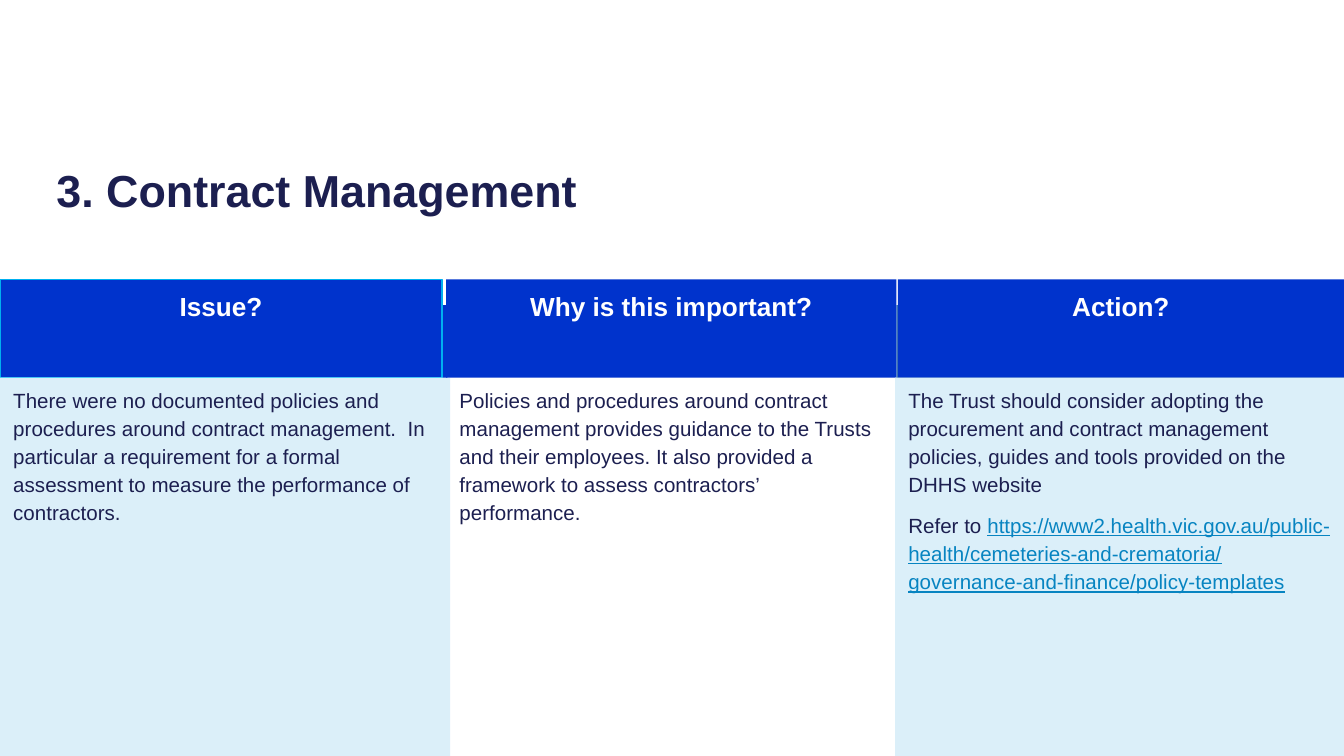
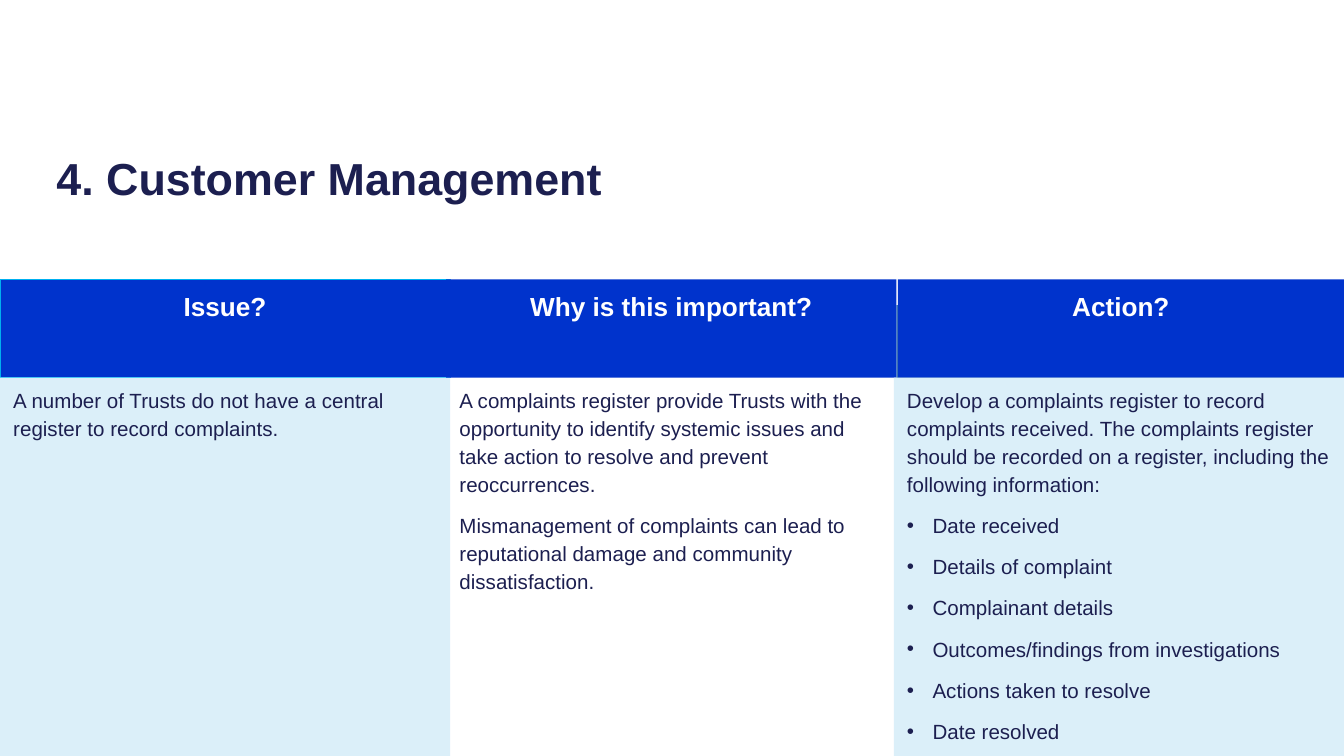
from dataclasses import dataclass

from lxml.etree import SubElement
from pptx import Presentation
from pptx.dml.color import RGBColor
from pptx.enum.shapes import MSO_SHAPE
from pptx.enum.text import MSO_ANCHOR, MSO_AUTO_SIZE, PP_ALIGN
from pptx.oxml.ns import qn
from pptx.shapes.autoshape import Shape
from pptx.slide import Slide
from pptx.text.text import _Paragraph
from pptx.util import Inches, Pt

# Shared style
COLORS = {
    "navy": "1C1F50",
    "blue": "0033CC",
    "steel": "427CB2",
    "pale": "DBEFF9",
    "cyan": "00B0F0",
    "link": "0784C1",
    "white": "FFFFFF",
}
FONT = "Arial"
PAGE_WIDTH = 10
PAGE_HEIGHT = PAGE_WIDTH * 9 / 16
HEADER_TOP, HEADER_HEIGHT = 2.08, 0.73
BODY_TOP = HEADER_TOP + HEADER_HEIGHT
BODY_HEIGHT = PAGE_HEIGHT - BODY_TOP
BODY_WIDTH = 3.35
PANEL_TOP, PANEL_WIDTH = 2.27, 3.33
BULLET_INDENT = 0.19


@dataclass(frozen=True)
class Line:
    text: str
    link: str = ""
    bullet: bool = False


@dataclass(frozen=True)
class Column:
    heading: str
    header_left: float
    header_width: float
    body_left: float
    lines: list[Line]
    body_fill: str | None = "pale"
    outline: str | None = None


@dataclass(frozen=True)
class Topic:
    title: str
    title_top: float
    title_height: float
    columns: list[Column]


def issue(header_width: float, lines: list[Line]) -> Column:
    return Column("Issue?", 0, header_width, 0, lines, outline="cyan")


def importance(lines: list[Line]) -> Column:
    return Column("Why is this important?", 3.32, BODY_WIDTH, 3.32, lines, body_fill=None)


def action(body_left: float, lines: list[Line]) -> Column:
    return Column("Action?", 6.68, 3.32, body_left, lines)


# Content
TOPICS = [
    Topic("3. Contract Management", 0.97, 0.8, [
        issue(3.29, [Line(
            "There were no documented policies and procedures around contract "
            "management.  In particular a requirement for a formal assessment to "
            "measure the performance of contractors.")]),
        importance([Line(
            "Policies and procedures around contract management provides guidance "
            "to the Trusts and their employees. It also provided a framework to "
            "assess contractors’ performance.")]),
        action(6.66, [
            Line("The Trust should consider adopting the procurement and contract "
                 "management policies, guides and tools provided on the DHHS website"),
            Line("Refer to ",
                 link="https://www2.health.vic.gov.au/public-health/"
                      "cemeteries-and-crematoria/governance-and-finance/policy-templates"),
        ]),
    ]),
    Topic("4. Customer Management", 1.02, 0.52, [
        issue(BODY_WIDTH, [Line(
            "A number of Trusts do not have a central register to record complaints.")]),
        importance([
            Line("A complaints register provide Trusts with the opportunity to identify "
                 "systemic issues and take action to resolve and prevent reoccurrences."),
            Line("Mismanagement of complaints can lead to reputational damage and "
                 "community dissatisfaction."),
        ]),
        action(6.65, [
            Line("Develop a complaints register to record complaints received. The "
                 "complaints register should be recorded on a register, including the "
                 "following information:"),
            *(Line(item, bullet=True) for item in (
                "Date received",
                "Details of complaint",
                "Complainant details",
                "Outcomes/findings from investigations",
                "Actions taken to resolve",
                "Date resolved",
            )),
        ]),
    ]),
]


def color(name: str) -> RGBColor:
    return RGBColor.from_string(COLORS[name])


def add_box(page: Slide, left: float, top: float, width: float, height: float,
            fill: str | None, outline: str | None = None) -> Shape:
    """Add a rectangle, or a plain text box when there is no fill."""
    bounds = Inches(left), Inches(top), Inches(width), Inches(height)
    if fill is None:
        box = page.shapes.add_textbox(*bounds)
    else:
        box = page.shapes.add_shape(MSO_SHAPE.RECTANGLE, *bounds)
        box.shadow.inherit = False
        box.fill.solid()
        box.fill.fore_color.rgb = color(fill)
        if outline:
            box.line.color.rgb = color(outline)
            box.line.width = Pt(0.75)
        else:
            box.line.fill.background()
    box.text_frame.word_wrap = True
    box.text_frame.vertical_anchor = MSO_ANCHOR.TOP
    return box


def add_bullet(para: _Paragraph) -> None:
    properties = para._p.get_or_add_pPr()
    properties.set("marL", str(Inches(BULLET_INDENT)))
    properties.set("indent", str(-Inches(BULLET_INDENT)))
    SubElement(properties, qn("a:buFont")).set("typeface", FONT)
    SubElement(properties, qn("a:buChar")).set("char", "•")


def format_paragraph(para: _Paragraph, size: float, ink: str, bold: bool = False,
                     align: PP_ALIGN = PP_ALIGN.LEFT, spacing: float = 1.14,
                     before: float = 0, after: float = 1) -> None:
    para.alignment = align
    para.line_spacing = spacing
    para.space_before = Pt(before)
    para.space_after = Pt(after)
    for span in para.runs:
        span.font.name = FONT
        span.font.size = Pt(size)
        span.font.bold = bold
        span.font.color.rgb = color(ink)


def draw_title(page: Slide, topic: Topic) -> None:
    title = page.shapes.title
    title.left, title.top = Inches(0.32), Inches(topic.title_top)
    title.width, title.height = Inches(9.36), Inches(topic.title_height)
    frame = title.text_frame
    frame.text = topic.title
    frame.word_wrap = True
    frame.auto_size = MSO_AUTO_SIZE.NONE
    frame.vertical_anchor = MSO_ANCHOR.MIDDLE
    format_paragraph(frame.paragraphs[0], 24, "navy", bold=True, spacing=1.2, after=2)


def draw_column(page: Slide, column: Column) -> None:
    # Heading
    header = add_box(page, column.header_left, HEADER_TOP, column.header_width,
                     HEADER_HEIGHT, "blue", column.outline)
    header.text_frame.text = column.heading
    format_paragraph(header.text_frame.paragraphs[0], 14, "white", bold=True,
                     align=PP_ALIGN.CENTER)

    # Body text
    body = add_box(page, column.body_left, BODY_TOP, BODY_WIDTH, BODY_HEIGHT,
                   column.body_fill)
    frame = body.text_frame
    for index, line in enumerate(column.lines):
        para = frame.add_paragraph() if index else frame.paragraphs[0]
        para.text = line.text
        if line.bullet:
            add_bullet(para)
        if line.link:
            para.add_run().text = line.link
        format_paragraph(para, 11, "navy", before=6 if index else 0)
        if line.link:
            address = para.runs[-1]
            address.font.underline = True
            address.font.color.rgb = color("link")


def draw_topic(page: Slide, topic: Topic) -> None:
    page.background.fill.solid()
    page.background.fill.fore_color.rgb = color("white")
    # Panels behind the outer columns
    for left, fill in ((0, "blue"), (PAGE_WIDTH - PANEL_WIDTH, "steel")):
        add_box(page, left, PANEL_TOP, PANEL_WIDTH, PAGE_HEIGHT - PANEL_TOP, fill)
    draw_title(page, topic)
    for column in topic.columns:
        draw_column(page, column)


def main() -> None:
    deck = Presentation()
    deck.slide_width, deck.slide_height = Inches(PAGE_WIDTH), Inches(PAGE_HEIGHT)
    title_only = deck.slide_layouts[5]
    for topic in TOPICS:
        draw_topic(deck.slides.add_slide(title_only), topic)
    deck.save("out.pptx")


if __name__ == "__main__":
    main()
